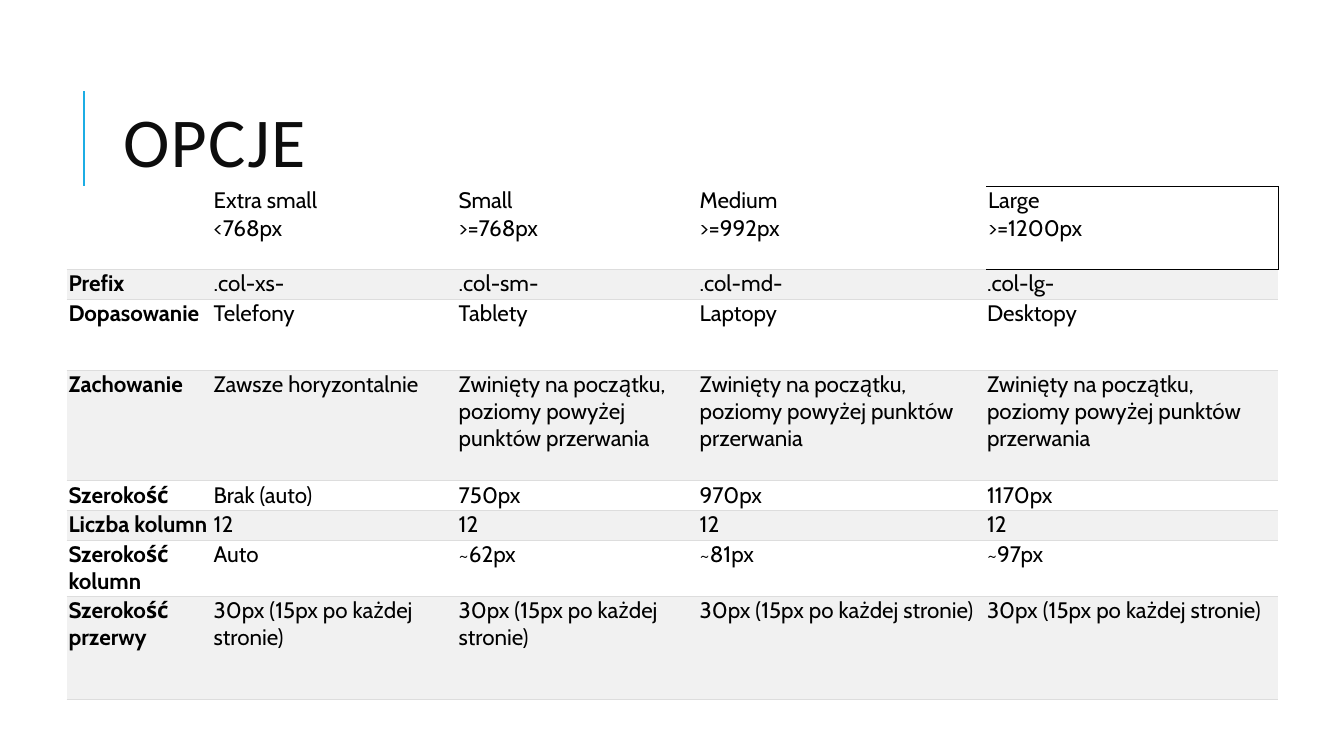
from lxml import etree
from pptx import Presentation
from pptx import util as u
from pptx.dml.color import RGBColor
from pptx.enum import shapes, text
from pptx.oxml.ns import qn

WIDTH, HEIGHT = 13.33, 7.5
COLOURS = {
    "accent": "1CADE4", "title": "0D0D0D", "text": "000000",
    "plain": "FFFFFF", "band": "F1F1F1", "rule": "DDDDDD", "frame": "000000",
}
COLUMNS = [1.45, 2.43, 2.39, 2.85, 2.9]
ROWS = [0.82, 0.3, 0.7, 1.1, 0.29, 0.3, 0.55, 1.02]
COLLAPSED = "Zwinięty na początku, poziomy powyżej punktów przerwania"
GUTTER = "30px (15px po każdej stronie)"
OPTIONS = [
    ["", "Extra small\v<768px", "Small\v>=768px", "Medium\v>=992px", "Large\v>=1200px"],
    ["Prefix", ".col-xs-", ".col-sm-", ".col-md-", ".col-lg-"],
    ["Dopasowanie", "Telefony", "Tablety", "Laptopy", "Desktopy"],
    ["Zachowanie", "Zawsze horyzontalnie"] + [COLLAPSED] * 3,
    ["Szerokość", "Brak (auto)", "750px", "970px", "1170px"],
    ["Liczba kolumn"] + ["12"] * 4,
    ["Szerokość kolumn", "Auto", "~62px", "~81px", "~97px"],
    ["Szerokość przerwy"] + [GUTTER] * 4,
]
LAST = len(COLUMNS) - 1


def rgb(name):
    return RGBColor.from_string(COLOURS[name])


def add_title(slide, wording):
    title = slide.shapes.title
    title.left, title.top = u.Inches(1.12), u.Inches(0.64)
    title.width, title.height = u.Inches(10.63), u.Inches(1.64)
    frame = title.text_frame
    frame.text = wording
    frame.word_wrap = True
    frame.vertical_anchor = text.MSO_ANCHOR.MIDDLE
    heading = frame.paragraphs[0]
    heading.alignment = text.PP_ALIGN.LEFT
    heading.line_spacing = 0.8
    heading.font.size = u.Pt(50)
    heading.font.name = "Calibri"
    heading.font.color.rgb = rgb("title")
    heading.runs[0].font._element.set("spc", "100")


def add_accent(slide, x, top, bottom):
    accent = slide.shapes.add_connector(
        shapes.MSO_CONNECTOR.STRAIGHT,
        u.Inches(x), u.Inches(bottom), u.Inches(x), u.Inches(top))
    accent.line.color.rgb = rgb("accent")
    accent.line.width = u.Pt(1.5)
    etree.SubElement(accent._element.spPr, qn("a:effectLst"))


def edge_below(row, column):
    """Colour of the rule under a row; row -1 is the top of the table."""
    if column == LAST and row < 1:
        return "frame"
    return None if row < 0 else "rule"


def set_borders(cell, row, column):
    edges = {
        "a:lnL": None,
        "a:lnR": "frame" if (row, column) == (0, LAST) else None,
        "a:lnT": edge_below(row - 1, column),
        "a:lnB": edge_below(row, column),
    }
    properties = cell._tc.get_or_add_tcPr()
    for place, (tag, colour) in enumerate(edges.items()):
        line = etree.Element(qn(tag), w=str(u.Pt(0.6)))
        if colour:
            fill = etree.SubElement(line, qn("a:solidFill"))
            etree.SubElement(fill, qn("a:srgbClr"), val=COLOURS[colour])
        else:
            etree.SubElement(line, qn("a:noFill"))
        properties.insert(place, line)


def fill_cell(cell, wording, row, column):
    cell.margin_top = cell.margin_bottom = cell.margin_right = u.Inches(0.01)
    cell.margin_left = u.Inches(0.02 if column == 0 or (row, column) == (0, LAST) else 0.01)
    cell.vertical_anchor = text.MSO_ANCHOR.TOP
    cell.text = wording
    entry = cell.text_frame.paragraphs[0]
    entry.font.size = u.Pt(16)
    entry.font.name = "Cabin"
    entry.font.bold = column == 0
    entry.font.color.rgb = rgb("text")
    if (row, column) == (0, LAST):
        cell.fill.background()
    else:
        cell.fill.solid()
        cell.fill.fore_color.rgb = rgb("band" if row % 2 else "plain")
    set_borders(cell, row, column)


def add_options(slide, left, top):
    options = slide.shapes.add_table(
        len(ROWS), len(COLUMNS), u.Inches(left), u.Inches(top),
        u.Inches(sum(COLUMNS)), u.Inches(sum(ROWS))).table
    options.first_row = options.horz_banding = False
    for column, width in zip(options.columns, COLUMNS):
        column.width = u.Inches(width)
    for row, height in zip(options.rows, ROWS):
        row.height = u.Inches(height)
    for r, entries in enumerate(OPTIONS):
        for c, wording in enumerate(entries):
            fill_cell(options.cell(r, c), wording, r, c)


def main():
    deck = Presentation()
    deck.slide_width, deck.slide_height = u.Inches(WIDTH), u.Inches(HEIGHT)
    slide = deck.slides.add_slide(deck.slide_layouts[5])
    # Heading with its accent line
    add_accent(slide, WIDTH / 16, HEIGHT * 0.12, HEIGHT * 0.12 + 1)
    add_title(slide, "OPCJE")
    # Grid options by screen size
    add_options(slide, 0.66, 1.85)
    deck.save("out.pptx")


if __name__ == "__main__":
    main()
